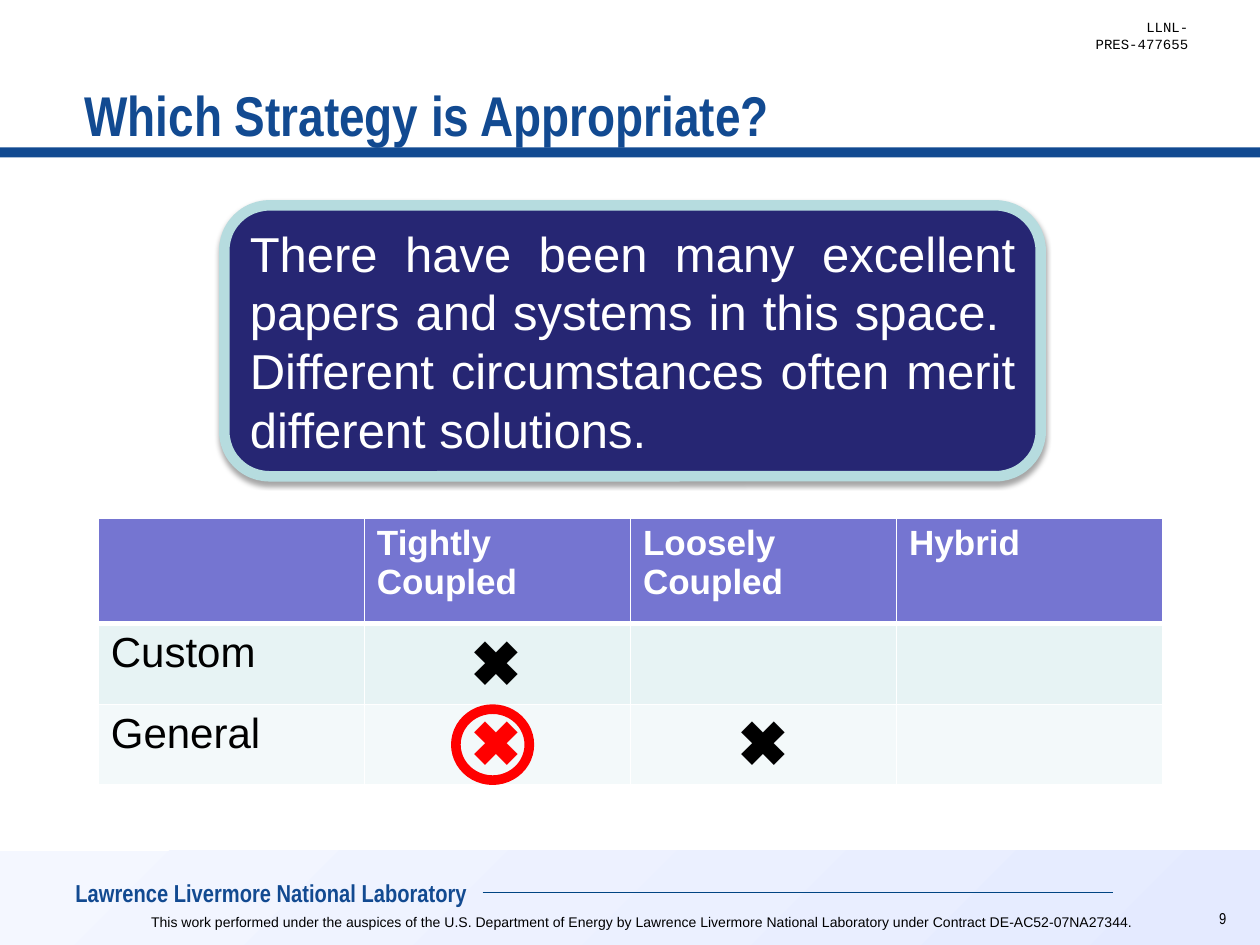
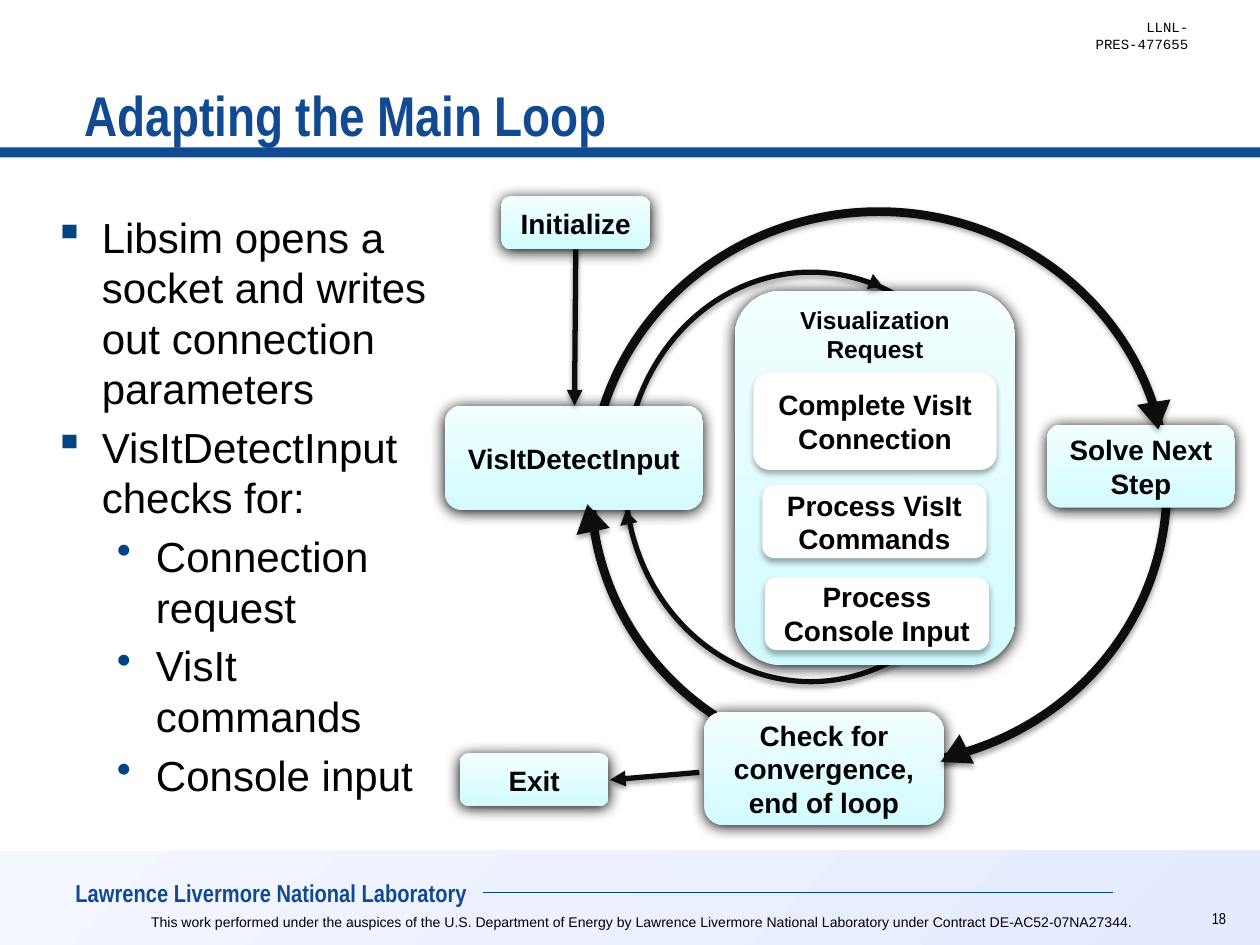
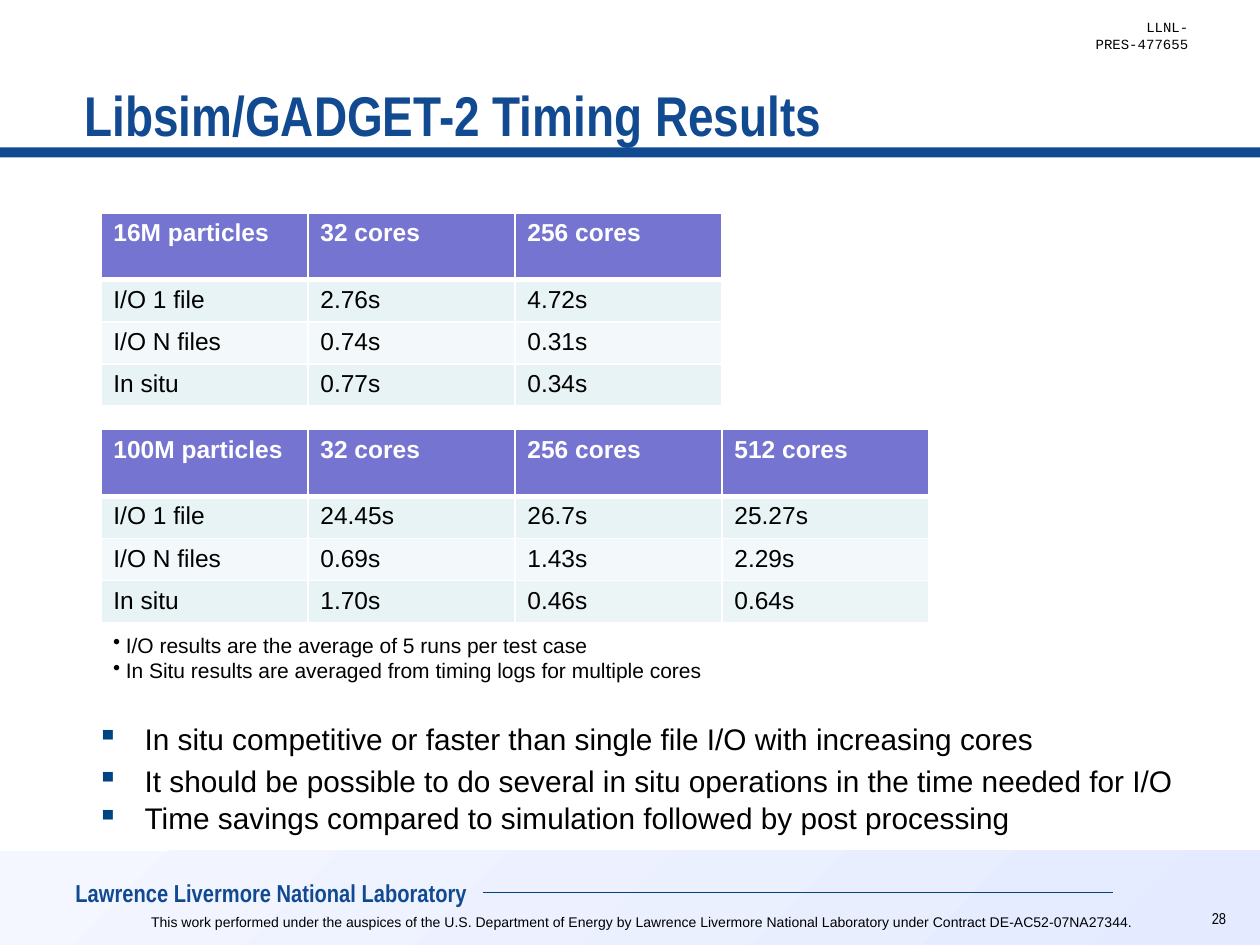
import pptx
import pptx.dml.color
import pptx.enum.shapes
import pptx.enum.text
import pptx.oxml
import pptx.oxml.ns
import pptx.util
from lxml import etree

SHAPE = pptx.enum.shapes.MSO_SHAPE
ALIGN = pptx.enum.text.PP_ALIGN
ANCHOR = pptx.enum.text.MSO_ANCHOR

COLUMNS, ROWS = 100, 75
BLUE, BULLET, INK, WHITE, BLACK, RED = "124A91", "004483", "0D0D0D", "FFFFFF", "000000", "FF0000"
HEADER, STRIPES = "7575D1", ("E7F3F4", "F3F9FA")
BAND_GRADIENT = ("F4F7FF", "E4EAFF", 315)
STEP_GRADIENT = ("D3FBFF", "F2FEFF", 90)
SOFT_SHADOW = (35, 3.1, 1.8)
STEP_SHADOW = (100, 8.5, 1)
CARD_SHADOW = (32, 3.5, 2.2)
SQUARE = ("▪", 0.38, 0.38)
DOT = ("•", 0.81, 0.31)
NOTE_DOT = ("•", 0.1, 0.1)
LAB = "Lawrence Livermore National Laboratory"
CREDIT = (f"This work performed under the auspices of the U.S. Department of Energy by {LAB} "
          "under Contract DE-AC52-07NA27344.")


def color(value):
    return pptx.dml.color.RGBColor.from_string(value)


def element(parent, tag, **attributes):
    child = etree.SubElement(parent, pptx.oxml.ns.qn(tag))
    for name, value in attributes.items():
        child.set(name, str(value))
    return child


def write(frame, text, size=16, font="Arial", ink=BLACK, bold=False, align=None,
          bullet=None, bullet_ink=BULLET, before=0, spacing=None):
    paragraph = frame.paragraphs[-1]
    if paragraph.runs:
        paragraph = frame.add_paragraph()
    if bullet:
        mark, left, hang = bullet
        properties = paragraph._p.get_or_add_pPr()
        properties.set("marL", str(pptx.util.Inches(left)))
        properties.set("indent", str(-pptx.util.Inches(hang)))
        element(element(properties, "a:buClr"), "a:srgbClr", val=bullet_ink)
        element(properties, "a:buChar", char=mark)
    paragraph.alignment = align
    if before:
        paragraph.space_before = pptx.util.Pt(before)
    if spacing:
        paragraph.line_spacing = spacing
    paragraph.text = text
    for span in paragraph.runs:
        span.font.size = pptx.util.Pt(size)
        span.font.name = font
        span.font.bold = bold
        span.font.color.rgb = color(ink)


class Slides:
    def __init__(self):
        self.deck = pptx.Presentation()
        self.deck.slide_width = pptx.util.Inches(10)
        self.deck.slide_height = pptx.util.Inches(7.5)
        self.slide = None

    def across(self, columns):
        return round(self.deck.slide_width * columns / COLUMNS)

    def down(self, rows):
        return round(self.deck.slide_height * rows / ROWS)

    def place(self, left, top, width, height):
        return self.across(left), self.down(top), self.across(width), self.down(height)

    def shade(self, item, shadow):
        effects = element(item._element.spPr, "a:effectLst")
        if shadow:
            opacity, blur, distance = shadow
            outer = element(effects, "a:outerShdw", blurRad=pptx.util.Pt(blur),
                            dist=pptx.util.Pt(distance), dir=5400000, rotWithShape=0)
            element(element(outer, "a:srgbClr", val=BLACK), "a:alpha", val=opacity * 1000)

    def text(self, area, content, anchor=ANCHOR.TOP, inset=0.1, **style):
        box = self.slide.shapes.add_textbox(*self.place(*area))
        frame = box.text_frame
        frame.word_wrap = True
        frame.vertical_anchor = anchor
        frame.margin_left = pptx.util.Inches(inset)
        if content:
            write(frame, content, **style)
        return frame

    def shape(self, kind, area, fill=None, line=None, shadow=None, turn=0):
        shape = self.slide.shapes.add_shape(kind, *self.place(*area))
        shape.rotation = turn
        if fill is None:
            shape.fill.background()
        elif isinstance(fill, tuple):
            first, last, angle = fill
            shape.fill.gradient()
            shape.fill.gradient_angle = angle
            for stop, value in zip(shape.fill.gradient_stops, (first, last)):
                stop.color.rgb = color(value)
            for stop, position in zip(shape.fill.gradient_stops, (0, 1)):
                stop.position = position
        else:
            shape.fill.solid()
            shape.fill.fore_color.rgb = color(fill)
        if line:
            shape.line.color.rgb = color(line[0])
            shape.line.width = pptx.util.Pt(line[1])
        else:
            shape.line.fill.background()
        if shadow:
            self.shade(shape, shadow)
        else:
            shape.shadow.inherit = False
        return shape

    def panel(self, area, content, fill, shadow, line=None, anchor=ANCHOR.MIDDLE, **style):
        panel = self.shape(SHAPE.ROUNDED_RECTANGLE, area, fill, line, shadow)
        frame = panel.text_frame
        frame.word_wrap = True
        frame.vertical_anchor = anchor
        if anchor == ANCHOR.TOP:
            frame.margin_top = 0
        write(frame, content, **style)

    def step(self, area, content, fill=STEP_GRADIENT, shadow=STEP_SHADOW, size=16, **style):
        self.panel(area, content, fill, shadow, size=size, bold=True, align=ALIGN.CENTER, **style)

    def connect(self, start, end, ink, width, arrow=False, shadow=None):
        line = self.slide.shapes.add_connector(
            pptx.enum.shapes.MSO_CONNECTOR.STRAIGHT,
            self.across(start[0]), self.down(start[1]), self.across(end[0]), self.down(end[1]))
        line.line.color.rgb = color(ink)
        line.line.width = pptx.util.Pt(width)
        if arrow:
            element(line.line._get_or_add_ln(), "a:tailEnd", type="triangle")
        self.shade(line, shadow)

    def table(self, left, top, column, heights, rows, head_size, body_size, tints={}):
        area = self.place(left, top, column * len(rows[0]), sum(heights))
        table = self.slide.shapes.add_table(len(rows), len(rows[0]), *area).table
        for grid_column in table.columns:
            grid_column.width = self.across(column)
        for r, (row, height) in enumerate(zip(rows, heights)):
            table.rows[r].height = self.down(height)
            head = r == 0
            for c, content in enumerate(row):
                cell = table.cell(r, c)
                for side in "LRTB":
                    thick = (head and side == "B") or (r == 1 and side == "T")
                    edge = element(cell._tc.get_or_add_tcPr(), f"a:ln{side}",
                                   w=pptx.util.Pt(3 if thick else 1))
                    element(element(edge, "a:solidFill"), "a:srgbClr", val=WHITE)
                cell.fill.solid()
                tint = HEADER if head else STRIPES[(r - 1) % 2]
                cell.fill.fore_color.rgb = color(tints.get((r, c), tint))
                if content:
                    write(cell.text_frame, content, size=head_size if head else body_size,
                          ink=WHITE if head else BLACK, bold=head)

    def start(self, title, number):
        self.slide = self.deck.slides.add_slide(self.deck.slide_layouts[6])
        self.shape(SHAPE.RECTANGLE, (0, 67.5, 100, 7.5), BAND_GRADIENT)
        self.shape(SHAPE.RECTANGLE, (0, 11.7, 100, 0.8), BLUE)
        self.connect((38.3, 70.8), (88.3, 70.8), BULLET, 0.5)
        self.text((94.9, 72, 3.4, 2.1), str(number), inset=0, size=9, font="Arial Narrow",
                  align=ALIGN.RIGHT, spacing=0.75)
        self.text((83.4, 1, 11.9, 2.4), "LLNL-PRES-477655", size=8, font="Courier New",
                  align=ALIGN.RIGHT)
        self.text((5, 69.2, 35.8, 3.3), LAB, size=14, font="Arial Narrow", ink=BLUE, bold=True)
        self.text((6.7, 72, 88.6, 2.4), CREDIT, size=8, align=ALIGN.CENTER)
        self.text((6.7, 3.3, 86.9, 8.9), title, anchor=ANCHOR.BOTTOM, inset=0, size=32,
                  font="Arial Narrow", ink=BLUE, bold=True)


def strategy(show):
    show.start("Which Strategy is Appropriate?", 9)
    show.table(7.8, 41.1, 21.12, (8.4, 6.4, 6.4), (
        ("", "Tightly Coupled", "Loosely Coupled", "Hybrid"),
        ("Custom", "", "", ""),
        ("General", "", "", "")), 20, 24)
    show.panel((17.8, 16.3, 64.8, 21.5),
               "There have been many excellent papers and systems in this space.  "
               "Different circumstances often merit different solutions.",
               "262673", SOFT_SHADOW, ("B6DCDF", 6), size=28, ink=WHITE, align=ALIGN.JUSTIFY)
    for column, row, ink in ((0, 0, BLACK), (1, 1, BLACK), (0, 1, RED)):
        show.text((36.4 + 21.2 * column, 48.9 + 6.4 * row, 6.6, 7.1), "✖", size=36, ink=ink)
    ring = show.shape(SHAPE.DONUT, (35.8, 55.9, 6.6, 6.4), RED)
    ring.adjustments[0] = 0.12


def main_loop(show):
    show.start("Adapting the Main Loop", 18)
    arrow = {"ink": INK, "width": 3, "arrow": True, "shadow": (38, 3.1, 1.6)}
    show.step((36.5, 59.8, 11.8, 4.2), "Exit")
    show.connect((55.5, 61.3), (48.4, 61.9), **arrow)
    for loop, width in (((49.6, 21.6, 29.5, 32.5), 3), ((46.9, 16.8, 45.7, 43.9), 5)):
        show.shape(SHAPE.OVAL, loop, line=(INK, width), shadow=SOFT_SHADOW)
    show.step((83.1, 33.7, 14.9, 6.6), "Solve Next Step")
    show.step((55.9, 56.5, 19, 9), "Check for convergence, end of loop")
    show.step((58.3, 23.1, 22.3, 29.7), "Visualization\vRequest", size=14, anchor=ANCHOR.TOP)
    for card, content in (((59.8, 29.6, 19.3, 7.7), "Complete VisIt Connection"),
                          ((60.5, 38.5, 17.8, 5.8), "Process VisIt Commands"),
                          ((60.7, 45.8, 17.8, 5.8), "Process Console Input")):
        show.step(card, content, fill=WHITE, shadow=CARD_SHADOW)
    show.step((35.3, 32.2, 20.5, 8.3), "VisItDetectInput")
    for head, turn in (((90.4, 31.9, 2.7, 2.2), 170.6), ((45.5, 40, 2.7, 2.2), 348.1),
                       ((74.4, 58.8, 2.6, 2.3), 243.7), ((49.1, 40.5, 1.4, 1.1), 348.1),
                       ((68.9, 22, 1.3, 1.1), 112)):
        show.shape(SHAPE.ISOSCELES_TRIANGLE, head, INK, shadow=SOFT_SHADOW, turn=turn)
    show.connect((45.7, 19.8), (45.6, 32.2), **arrow)
    show.step((39.8, 15.6, 11.8, 4.2), "Initialize")
    frame = show.text((3.3, 16.3, 32.3, 51.7), "")
    for index, (content, bullet) in enumerate((
            ("Libsim opens a socket and writes out connection parameters", SQUARE),
            ("VisItDetectInput checks for:", SQUARE),
            ("Connection request", DOT), ("VisIt commands", DOT), ("Console input", DOT))):
        write(frame, content, size=24, bullet=bullet, before=4.8 if index else 0)


def timing(show):
    show.start("Libsim/GADGET-2 Timing Results", 28)
    heights = (5.3, 3.2, 3.2, 3.2)
    show.table(8, 16.9, 16.43, heights, (
        ("16M particles", "32 cores", "256 cores"),
        ("I/O 1 file", "2.76s", "4.72s"),
        ("I/O N files", "0.74s", "0.31s"),
        ("In situ", "0.77s", "0.34s")), 14, 14)
    show.table(8, 34.1, 16.43, heights, (
        ("100M particles", "32 cores", "256 cores", "512 cores"),
        ("I/O 1 file", "24.45s", "26.7s", "25.27s"),
        ("I/O N files", "0.69s", "1.43s", "2.29s"),
        ("In situ", "1.70s", "0.46s", "0.64s")), 14, 14,
        tints={(3, 2): "ECF5F6", (3, 3): "ECF5F6"})
    frame = show.text((6.7, 56.7, 88.7, 11.8), "")
    for content, before, spacing in (
            ("In situ competitive or faster than single file I/O with increasing cores", 0, None),
            ("It should be possible to do several in situ operations in the time needed for I/O",
             3.4, None),
            ("Time savings compared to simulation followed by post processing", 3.4, 0.9)):
        write(frame, content, size=17, bullet=SQUARE, before=before, spacing=spacing)
    frame = show.text((8, 49.7, 49.3, 5), "")
    for content in ("I/O results are the average of 5 runs per test case",
                    "In Situ results are averaged from timing logs for multiple cores"):
        write(frame, content, size=12, bullet=NOTE_DOT, bullet_ink=BLACK)


def main():
    show = Slides()
    for build in (strategy, main_loop, timing):
        build(show)
    show.deck.save("out.pptx")


if __name__ == "__main__":
    main()
